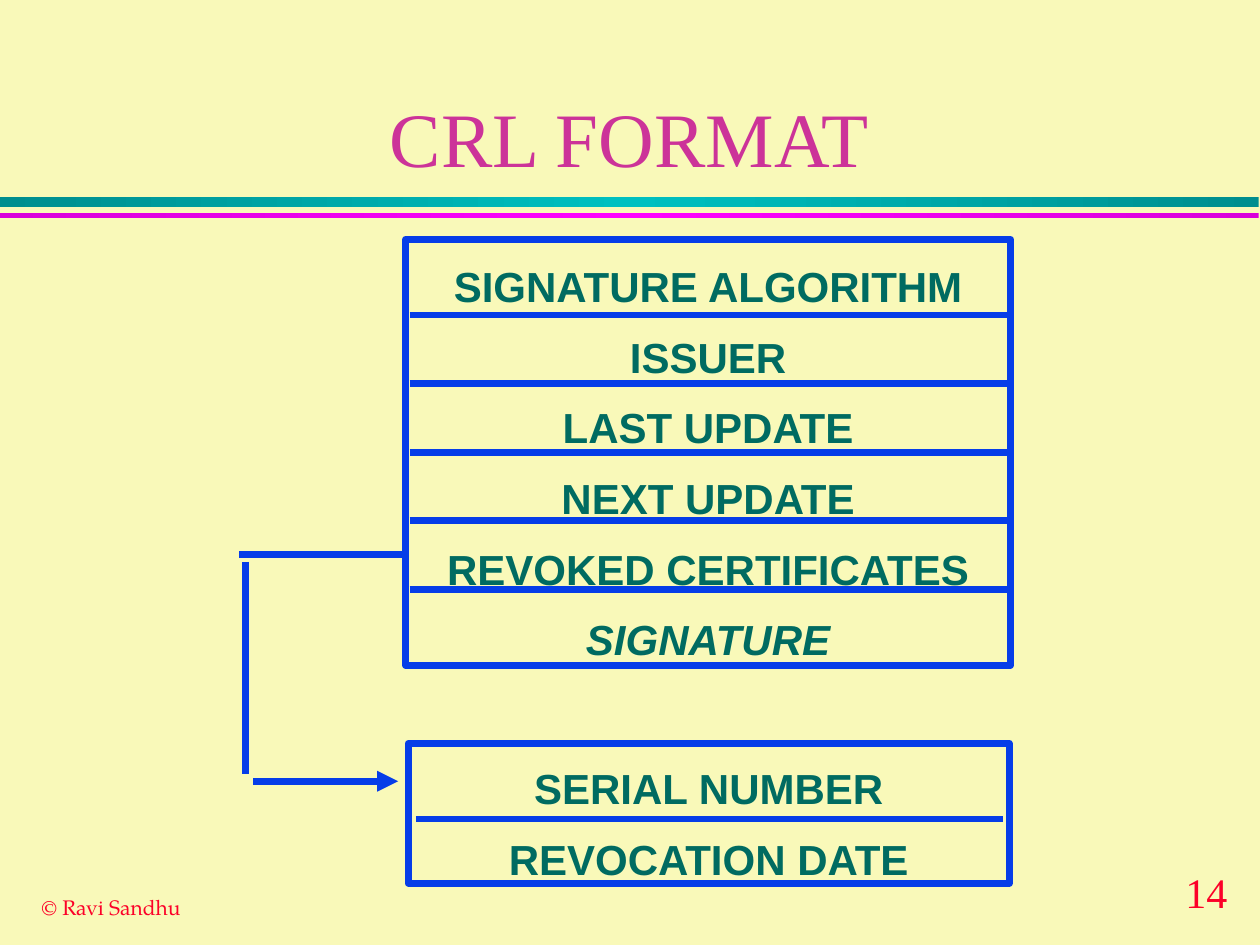
from copy import deepcopy
from dataclasses import dataclass

from pptx import Presentation
from pptx.dml.color import RGBColor
from pptx.enum.shapes import MSO_CONNECTOR, MSO_SHAPE
from pptx.enum.text import MSO_ANCHOR, MSO_AUTO_SIZE, PP_ALIGN
from pptx.oxml.ns import qn
from pptx.oxml.xmlchemy import OxmlElement
from pptx.util import Emu, Pt

RECTANGLE = MSO_SHAPE.RECTANGLE
STRAIGHT = MSO_CONNECTOR.STRAIGHT
CENTER, LEFT = PP_ALIGN.CENTER, PP_ALIGN.LEFT
TOP, MIDDLE, BOTTOM = MSO_ANCHOR.TOP, MSO_ANCHOR.MIDDLE, MSO_ANCHOR.BOTTOM
FIT, FIXED = MSO_AUTO_SIZE.SHAPE_TO_FIT_TEXT, MSO_AUTO_SIZE.NONE

EMU_PER_PX = 9144
LINE_WIDTH = Pt(4)
BLUE, GREEN, RED, PINK, CREAM = "063DE8", "006B61", "FC0128", "CC3399", "F9F9B9"
FIELD_FONT = {"name": "Arial", "size": Pt(24), "bold": True}


@dataclass
class Box:
    left: int
    top: int
    width: int
    height: int

    def emu(self) -> list[Emu]:
        return [px(v) for v in (self.left, self.top, self.width, self.height)]


@dataclass
class Band:
    box: Box
    edge: str
    middle: str


@dataclass
class Label:
    text: str
    box: Box
    font: dict
    color: str
    align: int
    frame: dict


@dataclass
class Record:
    box: Box
    fields: list[str]
    divider_left: int
    divider_right: int
    first_divider: int
    divider_step: float
    italic_field: str = ""


@dataclass
class Link:
    x1: int
    y1: int
    x2: int
    y2: int
    arrow: bool = False


def px(value: float) -> Emu:
    return Emu(round(value * EMU_PER_PX))


def rgb(color: str) -> RGBColor:
    return RGBColor.from_string(color)


def apply(target, values: dict) -> None:
    for key, value in values.items():
        setattr(target, key, value)


def style_run(run, font: dict, color: str) -> None:
    apply(run.font, font)
    run.font.color.rgb = rgb(color)


def draw_band(shapes, band: Band) -> None:
    bar = shapes.add_shape(RECTANGLE, *band.box.emu())
    bar.shadow.inherit = False
    bar.line.fill.background()
    bar.fill.gradient()
    bar.fill.gradient_angle = 0
    stop_list = bar._element.spPr.find(".//" + qn("a:gsLst"))
    stop_list.append(deepcopy(stop_list[0]))
    colors = (band.edge, band.middle, band.edge)
    for stop, position, color in zip(bar.fill.gradient_stops, (0, 0.5, 1), colors):
        stop.position = position
        stop.color.rgb = rgb(color)


def draw_label(shapes, label: Label) -> None:
    frame = shapes.add_textbox(*label.box.emu()).text_frame
    apply(frame, label.frame)
    paragraph = frame.paragraphs[0]
    paragraph.alignment = label.align
    run = paragraph.add_run()
    run.text = label.text
    style_run(run, label.font, label.color)


def draw_link(shapes, link: Link) -> None:
    connector = shapes.add_connector(
        STRAIGHT, px(link.x1), px(link.y1), px(link.x2), px(link.y2))
    connector.line.color.rgb = rgb(BLUE)
    connector.line.width = LINE_WIDTH
    if link.arrow:
        tail = OxmlElement("a:tailEnd")
        tail.set("type", "triangle")
        connector.line._get_or_add_ln().append(tail)
    connector._element.spPr.append(OxmlElement("a:effectLst"))


def draw_record(shapes, record: Record) -> None:
    outline = shapes.add_shape(RECTANGLE, *record.box.emu())
    outline.shadow.inherit = False
    outline.fill.background()
    outline.line.color.rgb = rgb(BLUE)
    outline.line.width = LINE_WIDTH
    frame = outline.text_frame
    apply(frame, {"word_wrap": False, "vertical_anchor": MIDDLE})
    for index, field in enumerate(record.fields):
        paragraph = frame.add_paragraph() if index else frame.paragraphs[0]
        apply(paragraph, {"alignment": CENTER, "line_spacing": 1.4})
        run = paragraph.add_run()
        run.text = field
        style_run(run, FIELD_FONT | {"italic": field == record.italic_field}, GREEN)
    for index in range(len(record.fields) - 1):
        y = record.first_divider + index * record.divider_step
        draw_link(shapes, Link(record.divider_left, y, record.divider_right, y))


BANDS = [
    Band(Box(0, 156, 999, 8), "008E8E", "00C0C0"),
    Band(Box(0, 169, 999, 4), "DA00DA", "FF00FF"),
]
FITTED = {"word_wrap": False, "auto_size": FIT, "vertical_anchor": TOP}
LABELS = [
    Label("14", Box(931, 683, 59, 50),
          {"name": "Times New Roman", "size": Pt(24)}, RED, LEFT, FITTED),
    Label("© Ravi Sandhu", Box(23, 705, 131, 30),
          {"name": "TeX Gyre Pagella", "size": Pt(12)}, RED, LEFT, FITTED),
    Label("CRL FORMAT", Box(209, 25, 581, 125),
          {"name": "Times New Roman", "size": Pt(44)}, PINK, CENTER,
          {"word_wrap": True, "auto_size": FIXED, "vertical_anchor": BOTTOM}),
]
RECORDS = [
    Record(Box(322, 190, 480, 338),
           ["SIGNATURE ALGORITHM", "ISSUER", "LAST UPDATE", "NEXT UPDATE",
            "REVOKED CERTIFICATES", "SIGNATURE"],
           325, 799, 250, 54.5, italic_field="SIGNATURE"),
    Record(Box(324, 590, 477, 111), ["SERIAL NUMBER", "REVOCATION DATE"],
           330, 796, 650, 0),
]
REVOKED_LINKS = [
    Link(324, 440, 190, 440),
    Link(195, 446, 195, 614),
    Link(201, 620, 316, 620, arrow=True),
]


def main() -> None:
    deck = Presentation()
    deck.slide_width, deck.slide_height = px(1000), px(750)
    slide = deck.slides.add_slide(deck.slide_layouts[6])
    slide.background.fill.solid()
    slide.background.fill.fore_color.rgb = rgb(CREAM)
    for draw, items in ((draw_band, BANDS), (draw_label, LABELS),
                        (draw_record, RECORDS), (draw_link, REVOKED_LINKS)):
        for item in items:
            draw(slide.shapes, item)
    deck.save("out.pptx")


if __name__ == "__main__":
    main()
